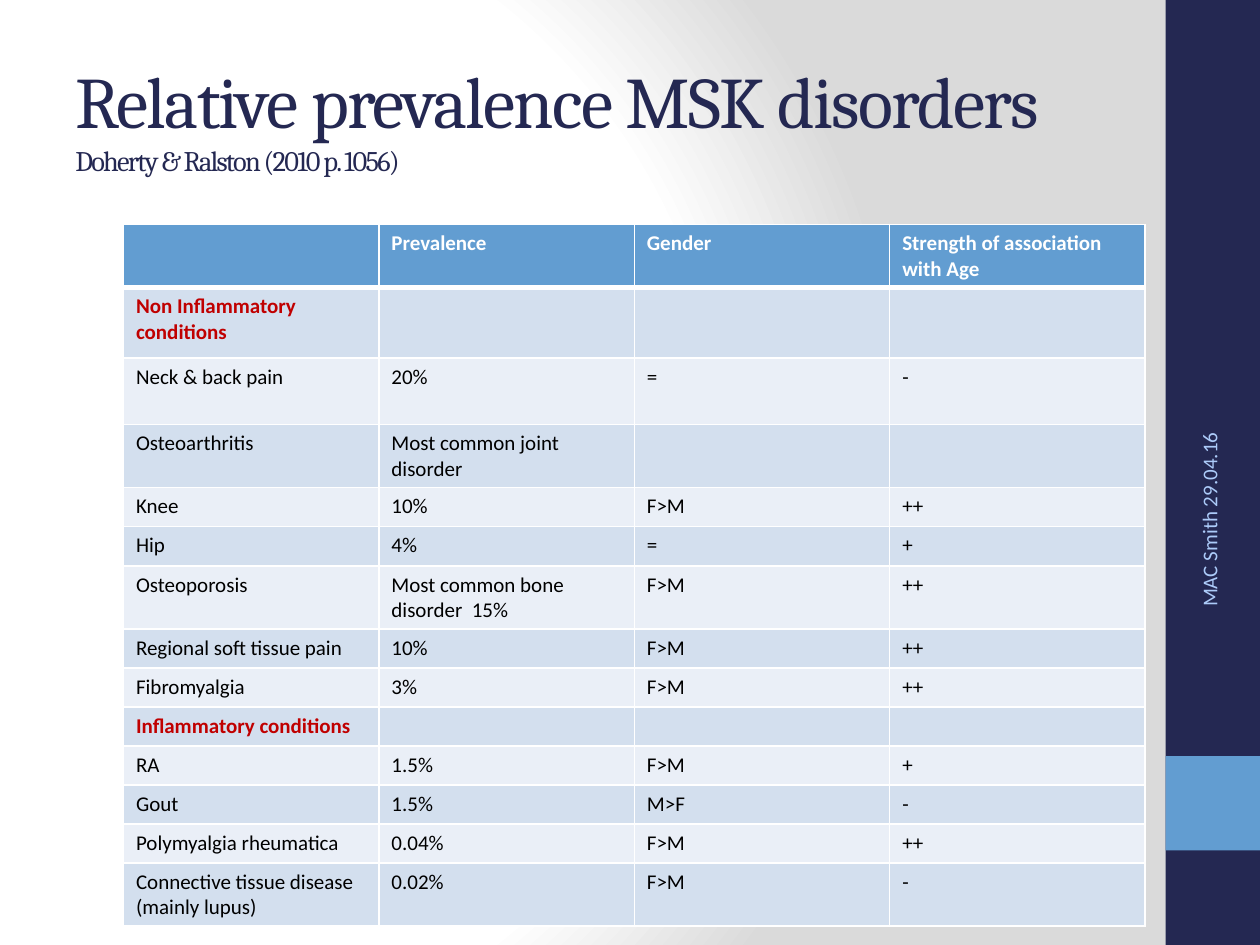
from pptx import Presentation
from pptx.dml.color import RGBColor
from pptx.enum.shapes import MSO_SHAPE
from pptx.enum.text import MSO_ANCHOR, PP_ALIGN
from pptx.oxml import parse_xml
from pptx.oxml.ns import nsdecls
from pptx.util import Inches, Pt

NAVY = RGBColor(0x24, 0x28, 0x52)
BLUE = RGBColor(0x62, 0x9D, 0xD1)
PALE_BLUE = RGBColor(0xAC, 0xCB, 0xF9)
BAND_DARK = RGBColor(0xD3, 0xDF, 0xEE)
BAND_LIGHT = RGBColor(0xEA, 0xEF, 0xF7)
RED = RGBColor(0xC0, 0x00, 0x00)
WHITE = RGBColor(0xFF, 0xFF, 0xFF)
BLACK = RGBColor(0x00, 0x00, 0x00)
GREY = RGBColor(0xDA, 0xDA, 0xDA)

HEADER = ("", "Prevalence", "Gender", "Strength of association with Age")
SECTIONS = {
    "Non Inflammatory conditions": [
        ("Neck & back pain", "20%", "=", "-"),
        ("Osteoarthritis", "Most common joint disorder", "", ""),
        ("Knee", "10%", "F>M", "++"),
        ("Hip", "4%", "=", "+"),
        ("Osteoporosis", "Most common bone disorder  15%", "F>M", "++"),
        ("Regional soft tissue pain", "10%", "F>M", "++"),
        ("Fibromyalgia", "3%", "F>M", "++"),
    ],
    "Inflammatory conditions": [
        ("RA", "1.5%", "F>M", "+"),
        ("Gout", "1.5%", "M>F", "-"),
        ("Polymyalgia rheumatica", "0.04%", "F>M", "++"),
        ("Connective tissue disease (mainly lupus)", "0.02%", "F>M", "-"),
    ],
}
ROW_HEIGHTS = (0.47, 0.56, 0.53, 0.47, 0.31, 0.31, 0.47) + (0.31,) * 6 + (0.47,)


class SlideBuilder:
    """Holds the fonts and the current slide, and draws each kind of element."""

    heading_font = "Cambria"
    body_font = "Calibri"
    body_size = 12

    def __init__(self, slide):
        self.slide = slide

    def style(self, font, name, size, color, bold=False):
        font.name, font.size, font.bold = name, Pt(size), bold
        font.color.rgb = color

    def background(self, stops, left, top, right, bottom):
        self.slide.background.fill.gradient()
        gradient = self.slide.background._cSld.bg.bgPr.find(".//{*}gradFill")
        stop_xml = "".join(
            f'<a:gs pos="{position * 1000}"><a:srgbClr val="{color}"/></a:gs>'
            for position, color in stops
        )
        radial = parse_xml(
            f'<a:gradFill {nsdecls("a")} rotWithShape="1"><a:gsLst>{stop_xml}</a:gsLst>'
            f'<a:path path="circle"><a:fillToRect l="{left * 1000}" t="{top * 1000}" '
            f'r="{right * 1000}" b="{bottom * 1000}"/></a:path></a:gradFill>'
        )
        gradient.getparent().replace(gradient, radial)

    def rectangle(self, left, top, width, height, color):
        shape = self.slide.shapes.add_shape(
            MSO_SHAPE.RECTANGLE, Inches(left), Inches(top), Inches(width), Inches(height)
        )
        shape.shadow.inherit = False
        shape.fill.solid()
        shape.fill.fore_color.rgb = color
        shape.line.fill.background()

    def text_box(self, left, top, width, height, rotation=0):
        shape = self.slide.shapes.add_textbox(
            Inches(left), Inches(top), Inches(width), Inches(height)
        )
        shape.rotation = rotation
        shape.text_frame.word_wrap = True
        shape.text_frame.vertical_anchor = MSO_ANCHOR.MIDDLE
        return shape.text_frame.paragraphs[0]

    def title(self, left, top, width, height, heading, source):
        paragraph = self.text_box(left, top, width, height)
        for text, size in ((heading, 41.4), (source, 16.2)):
            if paragraph.runs:
                paragraph.add_line_break()
            run = paragraph.add_run()
            run.text = text
            self.style(run.font, self.heading_font, size, NAVY)
            run._r.get_or_add_rPr().set("spc", "-100")

    def side_label(self, left, top, width, height, text):
        paragraph = self.text_box(left, top, width, height, rotation=270)
        paragraph.text = text
        paragraph.alignment = PP_ALIGN.RIGHT
        self.style(paragraph.font, self.body_font, self.body_size, PALE_BLUE)

    def cell(self, cell, text, fill, color, bold, bottom_border):
        properties = cell._tc.get_or_add_tcPr()
        for side, width in (("L", 1), ("R", 1), ("T", 1), ("B", bottom_border)):
            properties.append(parse_xml(
                f'<a:ln{side} {nsdecls("a")} w="{Pt(width)}"><a:solidFill>'
                f'<a:srgbClr val="{WHITE}"/></a:solidFill></a:ln{side}>'
            ))
        cell.fill.solid()
        cell.fill.fore_color.rgb = fill
        cell.text = text
        paragraph = cell.text_frame.paragraphs[0]
        self.style(paragraph.font, self.body_font, self.body_size, color, bold)

    def table(self, left, top, width, header, sections, heights):
        rows = [(header, WHITE, True)]
        for name, conditions in sections.items():
            rows.append(((name, "", "", ""), RED, True))
            rows += [(condition, BLACK, False) for condition in conditions]
        table = self.slide.shapes.add_table(
            len(rows), len(header), Inches(left), Inches(top),
            Inches(width), Inches(sum(heights))
        ).table
        for index, (texts, color, bold) in enumerate(rows):
            table.rows[index].height = Inches(heights[index])
            band = BAND_DARK if index % 2 else BAND_LIGHT
            fill, bottom_border = (band, 1) if index else (BLUE, 3)
            for column, text in enumerate(texts):
                self.cell(table.cell(index, column), text, fill, color, bold, bottom_border)


def main():
    presentation = Presentation()
    presentation.slide_width, presentation.slide_height = Inches(10), Inches(7.5)
    builder = SlideBuilder(presentation.slides.add_slide(presentation.slide_layouts[6]))
    builder.background([(0, WHITE), (75, WHITE), (100, GREY)], 20, 50, 100, 50)
    builder.rectangle(9.25, 0, 0.75, 7.5, NAVY)
    builder.rectangle(9.25, 6, 0.75, 0.75, BLUE)
    builder.title(0.5, 0.3, 8.33, 1.25,
                  "Relative prevalence MSK disorders", "Doherty & Ralston (2010 p. 1056)")
    builder.table(0.98, 1.78, 8.11, HEADER, SECTIONS, ROW_HEIGHTS)
    builder.side_label(8.3, 4.43, 2.59, 0.4, "MAC Smith 29.04.16")
    presentation.save("out.pptx")


if __name__ == "__main__":
    main()
